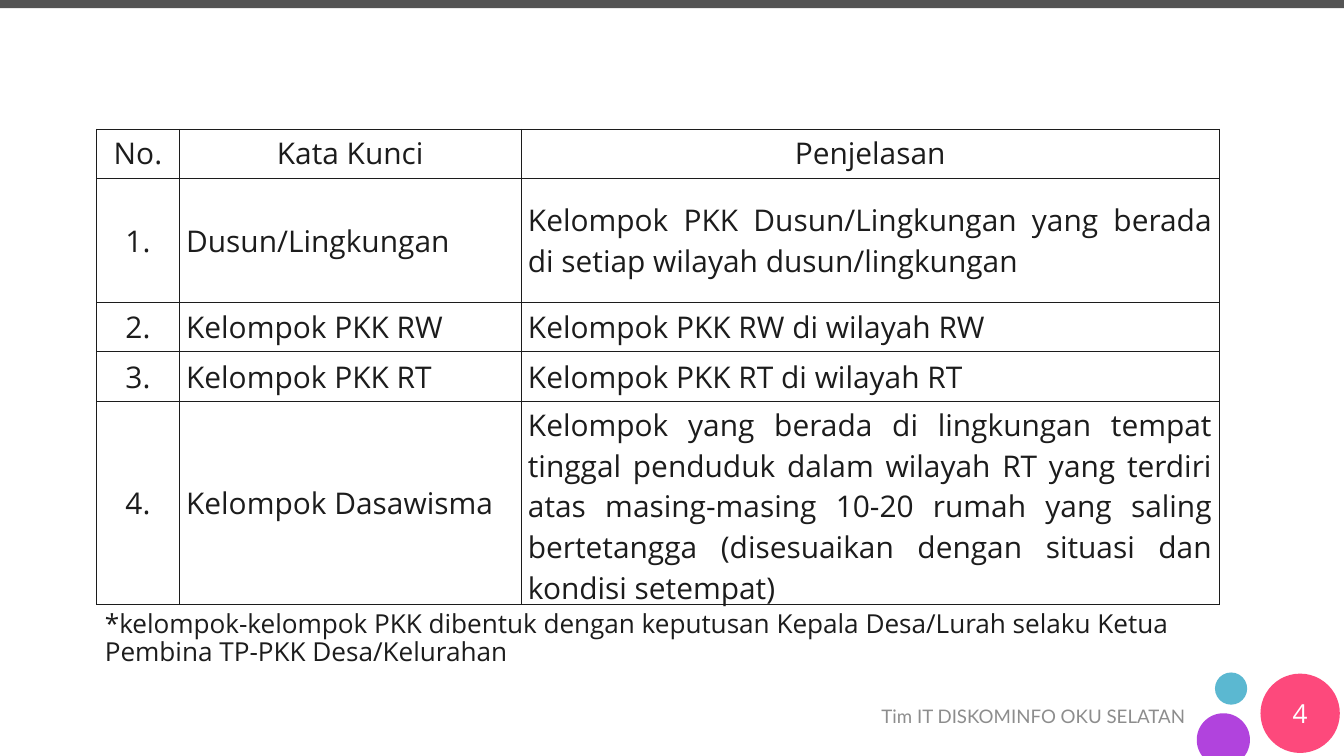
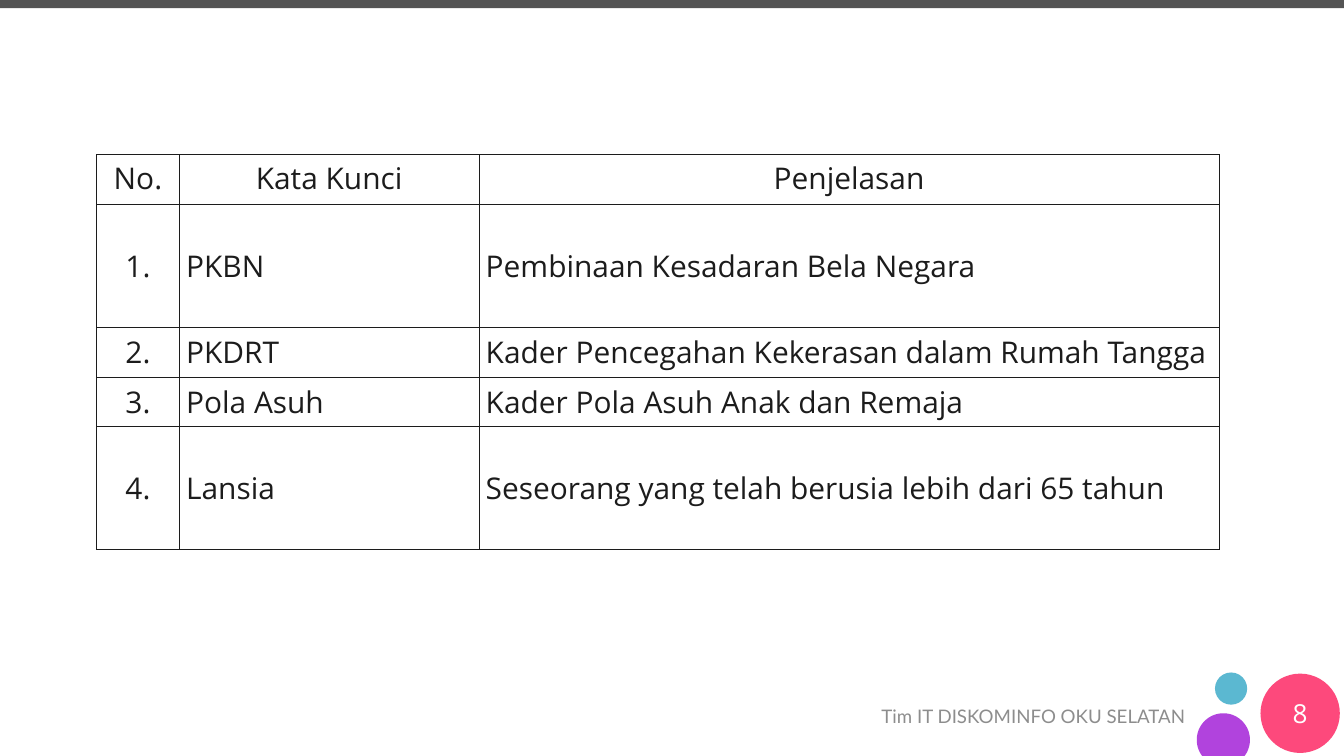
"""Build two glossary slides with keyword tables and a shared footer."""
import math

import lxml.etree
import pptx
import pptx.dml.color
import pptx.enum.shapes
import pptx.enum.text
import pptx.oxml.ns
import pptx.util

Pt = pptx.util.Pt
Align = pptx.enum.text.PP_ALIGN
Anchor = pptx.enum.text.MSO_ANCHOR
Shape = pptx.enum.shapes.MSO_SHAPE
qn = pptx.oxml.ns.qn

COLOURS = {
    "ink": "1C1C1C",
    "grey": "8D8D8D",
    "band": "545454",
    "white": "FFFFFF",
    "blue": "5BB8D1",
    "pink": "FD497C",
    "purple": "B143DD",
}
FORMATS = {
    "table": ({"name": "Open Sans", "size": Pt(32), "bold": False}, "ink"),
    "note": ({"name": "Open Sans", "size": Pt(28)}, "ink"),
    "number": ({"name": "Open Sans", "size": Pt(28)}, "white"),
    "footer": ({"name": "Lato", "size": Pt(20)}, "grey"),
}
FOOTER = "Tim IT DISKOMINFO OKU SELATAN"
FOOTER_INSETS = {
    "margin_left": Pt(13),
    "margin_right": Pt(13),
    "margin_top": Pt(6.5),
    "margin_bottom": Pt(6.5),
    "vertical_anchor": Anchor.MIDDLE,
}
HEADINGS = ("No.", "Kata Kunci", "Penjelasan")
COLUMN_ALIGNS = (Align.CENTER, Align.LEFT, Align.JUSTIFY)
TABLE_LEFT = 103.5
SLIDES = [
    {
        "number": "4",
        "top": 138.4,
        "columns": (88.75, 366.25, 748),
        "rows": (53, 132.5, 53, 53, 217.5),
        "terms": [
            ("Dusun/Lingkungan",
             "Kelompok PKK Dusun/Lingkungan yang berada di setiap wilayah "
             "dusun/lingkungan"),
            ("Kelompok PKK RW", "Kelompok PKK RW di wilayah RW"),
            ("Kelompok PKK RT", "Kelompok PKK RT di wilayah RT"),
            ("Kelompok Dasawisma",
             "Kelompok yang berada di lingkungan tempat tinggal penduduk dalam "
             "wilayah RT yang terdiri atas masing-masing 10-20 rumah yang saling "
             "bertetangga (disesuaikan dengan situasi dan kondisi setempat)"),
        ],
        "note": "*kelompok-kelompok PKK dibentuk dengan keputusan Kepala "
                "Desa/Lurah selaku Ketua Pembina TP-PKK Desa/Kelurahan",
    },
    {
        "number": "8",
        "top": 165.5,
        "columns": (88.75, 321, 793.25),
        "rows": (53, 132.5, 53, 53, 132),
        "terms": [
            ("PKBN", "Pembinaan Kesadaran Bela Negara"),
            ("PKDRT", "Kader Pencegahan Kekerasan dalam Rumah Tangga"),
            ("Pola Asuh", "Kader Pola Asuh Anak dan Remaja"),
            ("Lansia", "Seseorang yang telah berusia lebih dari 65 tahun"),
        ],
        "note": None,
    },
]


def write(frame, text, style, align):
    """Fill a text frame with one formatted paragraph."""
    para = frame.paragraphs[0]
    para.alignment = align
    span = para.add_run()
    span.text = text
    values, colour = FORMATS[style]
    for name, value in values.items():
        setattr(span.font, name, value)
    span.font.color.rgb = pptx.dml.color.RGBColor.from_string(COLOURS[colour])
    return para


def paint(shape, colour):
    """Give a shape a plain fill without line or shadow."""
    shape.shadow.inherit = False
    shape.fill.solid()
    shape.fill.fore_color.rgb = pptx.dml.color.RGBColor.from_string(COLOURS[colour])
    shape.line.fill.background()


deck = pptx.Presentation()
deck.slide_width, deck.slide_height = Pt(1440), Pt(810)

centre_x, centre_y, radius = 1310.75, 792.75, 28.5
cut = math.asin((810 - centre_y) / radius)
start, sweep = math.pi - cut, math.pi + 2 * cut
angles = [start + sweep * step / 60 for step in range(61)]
purple_outline = [
    (Pt(centre_x + radius * math.cos(angle)), Pt(centre_y + radius * math.sin(angle)))
    for angle in angles
]

for content in SLIDES:
    page = deck.slides.add_slide(deck.slide_layouts[6])

    for kind, colour, bounds in (
        (Shape.OVAL, "blue", (1301.75, 720.5, 34.5, 34.5)),
        (Shape.OVAL, "pink", (1350.5, 721.75, 85, 85)),
        (Shape.RECTANGLE, "band", (0, 0, 1440, 8.75)),
    ):
        paint(page.shapes.add_shape(kind, *map(Pt, bounds)), colour)
    builder = page.shapes.build_freeform(*purple_outline[0], scale=1.0)
    builder.add_line_segments(purple_outline[1:], close=True)
    paint(builder.convert_to_shape(), "purple")

    for text, style, align, bounds in (
        (FOOTER, "footer", Align.RIGHT, (827.25, 745.25, 455.75, 43)),
        (content["number"], "number", Align.CENTER, (1350.5, 743, 85, 43)),
    ):
        box = page.shapes.add_textbox(*map(Pt, bounds))
        box.text_frame.word_wrap = True
        for name, value in FOOTER_INSETS.items():
            setattr(box.text_frame, name, value)
        write(box.text_frame, text, style, align)

    columns, rows = content["columns"], content["rows"]
    table = page.shapes.add_table(
        len(rows), len(columns), Pt(TABLE_LEFT), Pt(content["top"]),
        Pt(sum(columns)), Pt(sum(rows)),
    ).table
    table.first_row = table.horz_banding = False
    for column, width in zip(table.columns, columns):
        column.width = Pt(width)
    for row, height in zip(table.rows, rows):
        row.height = Pt(height)

    entries = [HEADINGS]
    entries += [(f"{index}.", *term) for index, term in enumerate(content["terms"], 1)]
    for row_index, entry in enumerate(entries):
        for column_index, text in enumerate(entry):
            cell = table.cell(row_index, column_index)
            cell.fill.background()
            cell.vertical_anchor = Anchor.MIDDLE if row_index else Anchor.TOP
            align = COLUMN_ALIGNS[column_index] if row_index else Align.CENTER
            write(cell.text_frame, text, "table", align)
            properties = cell._tc.get_or_add_tcPr()
            for position, side in enumerate(("lnL", "lnR", "lnT", "lnB")):
                border = lxml.etree.Element(qn(f"a:{side}"), w=str(Pt(1)))
                fill = lxml.etree.SubElement(border, qn("a:solidFill"))
                lxml.etree.SubElement(fill, qn("a:srgbClr"), val=COLOURS["ink"])
                properties.insert(position, border)

    if content["note"]:
        box = page.shapes.add_textbox(Pt(105.25), Pt(651), Pt(1200), Pt(75))
        box.text_frame.word_wrap = True
        para = write(box.text_frame, content["note"], "note", Align.LEFT)
        para.line_spacing = 0.9

deck.save("out.pptx")
